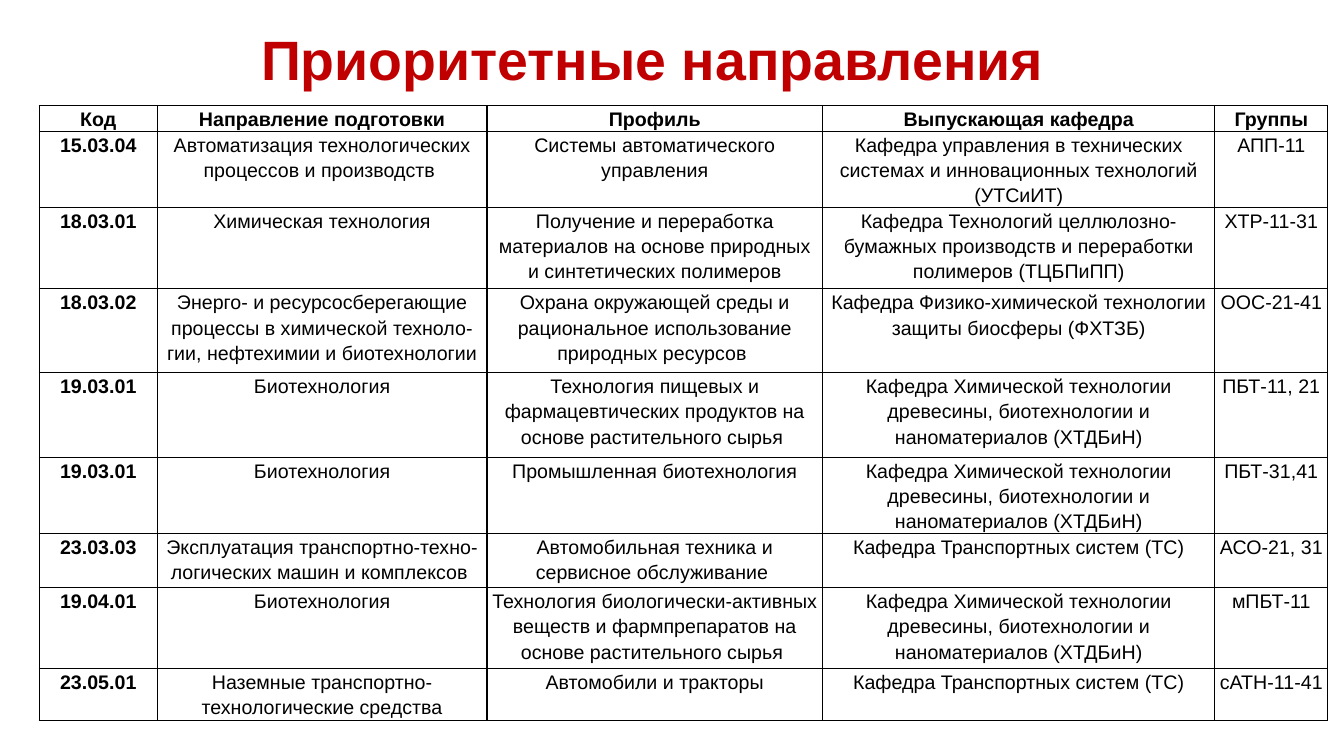
import dataclasses

import pptx
import pptx.dml.color
import pptx.enum.text
import pptx.oxml.ns
import pptx.util
from lxml import etree

PX = 9144  # 100 px to the inch
FONT = "Arial"
COLORS = {"title": "C00000", "text": "000000", "line": "000000"}
COLS = (117, 327, 333, 389, 112)
HEADS = ("Код", "Направление подготовки", "Профиль", "Выпускающая кафедра", "Группы")
WOOD = "Кафедра Химической технологии древесины, биотехнологии и наноматериалов (ХТДБиН)"
MOTOR = "Кафедра Транспортных систем (ТС)"


@dataclasses.dataclass(frozen=True)
class Row:
    high: int
    texts: tuple[str, ...]
    head: bool = False


ROWS = (
    Row(25, HEADS, head=True),
    Row(56, ("15.03.04", "Автоматизация технологических процессов и производств ",
             "Системы автоматического управления",
             "Кафедра управления в технических системах и инновационных технологий (УТСиИТ)",
             "АПП-11")),
    Row(81, ("18.03.01", "Химическая технология",
             "Получение и переработка материалов на основе природных и синтетических полимеров",
             "Кафедра Технологий целлюлозно-бумажных производств и переработки полимеров (ТЦБПиПП)",
             "ХТР-11-31")),
    Row(83, ("18.03.02",
             "Энерго- и ресурсосберегающие процессы в химической техноло-гии, нефтехимии и биотехнологии",
             "Охрана окружающей среды и рациональное использование природных ресурсов ",
             "Кафедра Физико-химической технологии защиты биосферы (ФХТЗБ)",
             "ООС-21-41")),
    Row(84, ("19.03.01", "Биотехнология",
             "Технология пищевых и фармацевтических продуктов на основе растительного сырья ",
             WOOD, "ПБТ-11, 21")),
    Row(75, ("19.03.01", "Биотехнология", "Промышленная биотехнология", WOOD, "ПБТ-31,41")),
    Row(54, ("23.03.03", "Эксплуатация транспортно-техно-логических машин и комплексов ",
             "Автомобильная техника и сервисное обслуживание ", MOTOR, "АСО-21, 31 ")),
    Row(80, ("19.04.01", "Биотехнология",
             "Технология биологически-активных веществ и фармпрепаратов на основе растительного сырья ",
             WOOD, "мПБТ-11")),
    Row(52, ("23.05.01", "Наземные транспортно-технологические средства",
             "Автомобили и тракторы", MOTOR, "сАТН-11-41")),
)


def px(count: int) -> pptx.util.Emu:
    return pptx.util.Emu(count * PX)


def write(frame, text: str, size: float, color: str, bold: bool, space: float) -> None:
    """Put one centred run into the first paragraph of a text frame."""
    para = frame.paragraphs[0]
    para.alignment = pptx.enum.text.PP_ALIGN.CENTER
    para.line_spacing = space
    run = para.add_run()
    run.text = text
    run.font.name = FONT
    run.font.size = pptx.util.Pt(size)
    run.font.bold = bold
    run.font.color.rgb = pptx.dml.color.RGBColor.from_string(COLORS[color])


def frame_cell(cell) -> None:
    """Draw a thin line on all four sides of a cell, with no fill."""
    cell.fill.background()
    props = cell._tc.get_or_add_tcPr()
    qn = pptx.oxml.ns.qn
    for spot, side in enumerate(("a:lnL", "a:lnR", "a:lnT", "a:lnB")):
        line = etree.Element(qn(side), w=str(pptx.util.Pt(1)))
        fill = etree.SubElement(line, qn("a:solidFill"))
        etree.SubElement(fill, qn("a:srgbClr"), val=COLORS["line"])
        props.insert(spot, line)


def add_title(slide) -> None:
    title = slide.shapes.title
    title.left, title.top, title.width, title.height = map(px, (250, 40, 833, 45))
    frame = title.text_frame
    frame.word_wrap = True
    frame.auto_size = pptx.enum.text.MSO_AUTO_SIZE.NONE
    frame.vertical_anchor = pptx.enum.text.MSO_ANCHOR.MIDDLE
    frame.margin_left, frame.margin_right = px(0), px(39)
    write(frame, "Приоритетные направления", 39.6, "title", True, 0.9)


def add_grid(slide) -> None:
    high = sum(row.high for row in ROWS)
    grid = slide.shapes.add_table(
        len(ROWS), len(COLS), px(39), px(105), px(sum(COLS)), px(high)).table
    grid.first_row = grid.horz_banding = False
    for col, wide in zip(grid.columns, COLS):
        col.width = px(wide)
    for y, row in enumerate(ROWS):
        grid.rows[y].height = px(row.high)
        for x, text in enumerate(row.texts):
            cell = grid.cell(y, x)
            cell.margin_left = cell.margin_right = px(4)
            cell.margin_top = cell.margin_bottom = 0
            write(cell.text_frame, text, 14, "text", row.head or x == 0, 1.15)
            frame_cell(cell)


def main() -> None:
    deck = pptx.Presentation()
    deck.slide_width, deck.slide_height = px(1333), px(750)
    slide = deck.slides.add_slide(deck.slide_layouts.get_by_name("Title Only"))
    add_title(slide)
    add_grid(slide)
    deck.save("out.pptx")


if __name__ == "__main__":
    main()
